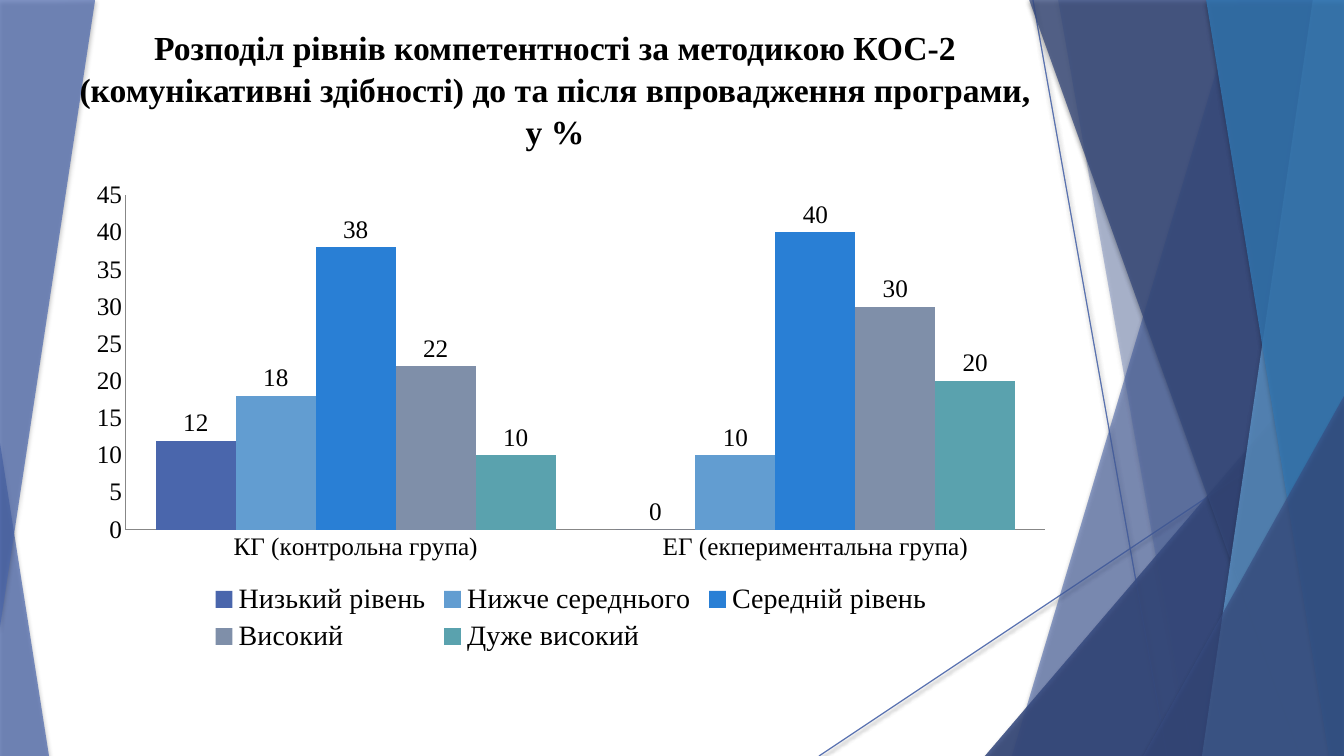
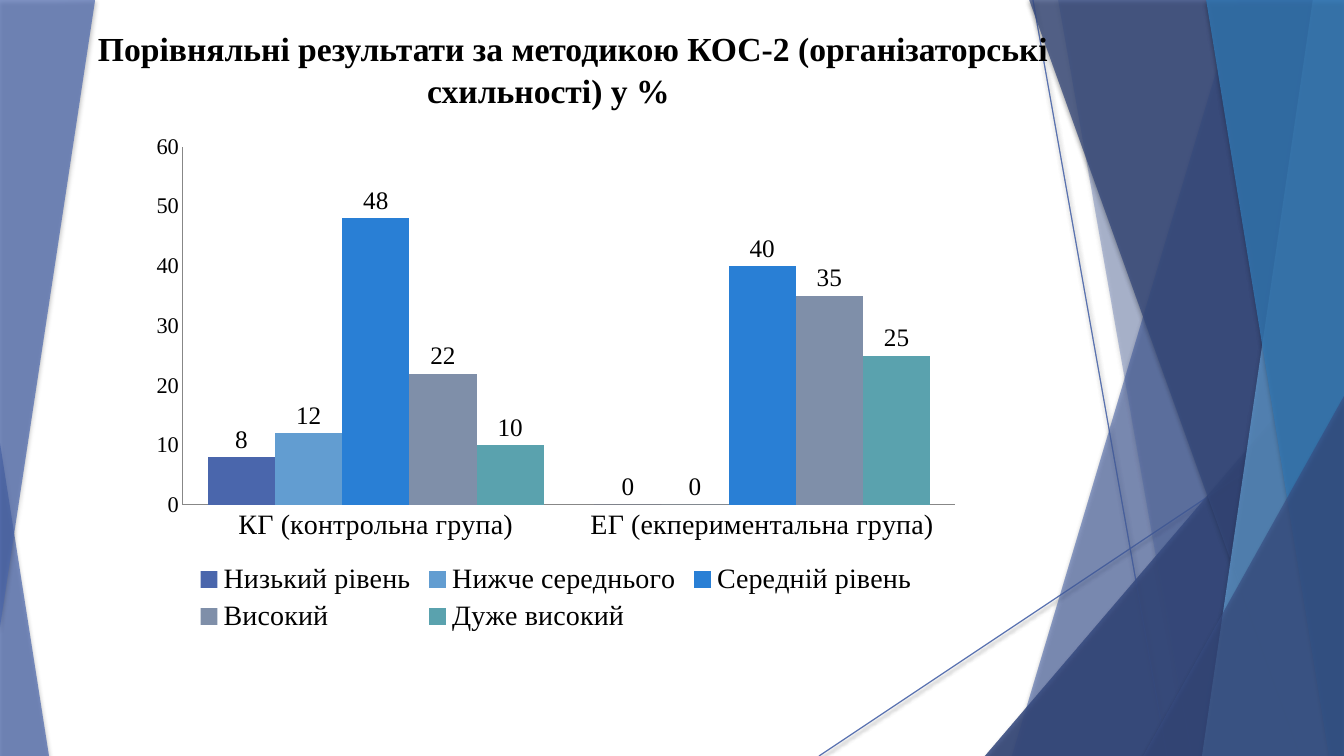
from lxml.etree import SubElement
from pptx import Presentation
from pptx.chart.data import CategoryChartData
from pptx.dml.color import RGBColor
from pptx.enum.chart import (XL_CHART_TYPE, XL_LABEL_POSITION,
                             XL_LEGEND_POSITION, XL_TICK_MARK)
from pptx.enum.shapes import MSO_CONNECTOR, MSO_SHAPE
from pptx.enum.text import MSO_ANCHOR, MSO_AUTO_SIZE, PP_ALIGN
from pptx.oxml.ns import qn
from pptx.util import Pt

SLIDE_WIDTH, SLIDE_HEIGHT = 1344, 756
EMU_PER_PX = 12192000 / SLIDE_WIDTH
FONT = "Times New Roman"
BLACK, AXIS_GRAY = "000000", "878787"
BLUE, NAVY, SKY, STEEL = "4A66AC", "384C81", "629DD1", "3477B2"

# Shadow: opacity in percent, blur and distance in points
SHAPE_SHADOW = (35, 3, 2)
LINE_SHADOW = (38, 3.1, 1.6)

# Ray lines: start and end points
RAYS = [((1033, 0), (1167, 756)), ((1344, 406), (819, 756))]

# Right-hand facets: outline or triangle box, colour, opacity in percent.
# A band is given by its top and bottom left corners and runs to the slide edge.
FACETS = [
    ("band", (1238, 1012), BLUE, 36),
    ("band", (1058, 1191), BLUE, 20),
    ("triangle", (985, 336, 359, 420), NAVY, 66),
    ("band", (1029, 1301), NAVY, 50),
    ("band", (1313, 1202), SKY, 70),
    ("band", (1206, 1329), STEEL, 80),
    ("triangle", (1143, 396, 201, 360), NAVY, 66),
]
LEFT_TRIANGLE = (0, 443, 49, 313)
LEFT_OUTLINE = [(0, 0), (95, -1), (95, 1), (0, 627)]

CATEGORIES = ["КГ (контрольна група)", "ЕГ (екпериментальна група)"]
LEVELS = {
    "Низький рівень": BLUE,
    "Нижче середнього": SKY,
    "Середній рівень": "297FD5",
    "Високий": "7F8FA9",
    "Дуже високий": "5AA2AE",
}

SLIDES = [
    {
        "title": ["Розподіл рівнів компетентності за методикою КОС-2 "
                  "(комунікативні здібності) до та після впровадження програми,",
                  "у %"],
        "title_box": (51, 22, 1008, 132),
        "indent": 0,
        "chart_box": (77, 172, 988, 486),
        "values": [(12, 0), (18, 10), (38, 40), (22, 30), (10, 20)],
        "maximum": 45, "step": 5, "category_size": 18, "value_size": 18,
    },
    {
        "title": ["Порівняльні результати за методикою КОС-2 "
                  "(організаторські схильності) у %"],
        "title_box": (-15, 22, 1127, 92),
        "indent": 49,
        "chart_box": (140, 124, 832, 514),
        "values": [(8, 0), (12, 0), (48, 40), (22, 35), (10, 25)],
        "maximum": 60, "step": 10, "category_size": 20, "value_size": 16,
    },
]


def px(length):
    return round(length * EMU_PER_PX)


def emu(lengths):
    return [px(length) for length in lengths]


def color(hex_value):
    return RGBColor.from_string(hex_value)


def apply(target, formats):
    for name, value in formats.items():
        setattr(target, name, value)


def format_font(font, size, bold=False):
    apply(font, {"name": FONT, "size": Pt(size), "bold": bold})
    font.color.rgb = color(BLACK)


def add_effects(shape, opacity, shadow):
    """Make the colours translucent and cast a soft shadow downwards."""
    properties = shape.element.spPr
    for node in properties.iter(qn("a:srgbClr")):
        SubElement(node, qn("a:alpha"), val=str(opacity * 1000))
    shadow_opacity, blur, distance = shadow
    effects = SubElement(properties, qn("a:effectLst"))
    outer = SubElement(effects, qn("a:outerShdw"), blurRad=str(Pt(blur)),
                       dist=str(Pt(distance)), dir="5400000", rotWithShape="0")
    tint = SubElement(outer, qn("a:srgbClr"), val=BLACK)
    SubElement(tint, qn("a:alpha"), val=str(shadow_opacity * 1000))


# Background artwork
def finish_facet(shape, hex_value, opacity):
    shape.fill.solid()
    shape.fill.fore_color.rgb = color(hex_value)
    shape.line.fill.background()
    add_effects(shape, opacity, SHAPE_SHADOW)


def add_outline(group, points, hex_value, opacity):
    start, *others = [emu(point) for point in points]
    builder = group.shapes.build_freeform(*start)
    builder.add_line_segments(others, close=True)
    finish_facet(builder.convert_to_shape(), hex_value, opacity)


def add_triangle(group, box, apex, hex_value, opacity):
    shape = group.shapes.add_shape(MSO_SHAPE.ISOSCELES_TRIANGLE, *emu(box))
    shape.adjustments[0] = apex
    finish_facet(shape, hex_value, opacity)


def add_right_artwork(group):
    for start, end in RAYS:
        ray = group.shapes.add_connector(MSO_CONNECTOR.STRAIGHT,
                                         *emu(start), *emu(end))
        ray.line.color.rgb = color(BLUE)
        ray.line.width = Pt(0.75)
        add_effects(ray, 70, LINE_SHADOW)
    for kind, geometry, hex_value, opacity in FACETS:
        if kind == "triangle":
            add_triangle(group, geometry, 1, hex_value, opacity)
        else:
            top, bottom = geometry
            points = [(top, -1), (SLIDE_WIDTH, -1),
                      (SLIDE_WIDTH, SLIDE_HEIGHT), (bottom, SLIDE_HEIGHT)]
            add_outline(group, points, hex_value, opacity)


def add_template_artwork(slide, layout):
    """Draw the facets and move them behind the master and layout content."""
    master_group = slide.shapes.add_group_shape()
    add_right_artwork(master_group)
    add_triangle(master_group, LEFT_TRIANGLE, 0, BLUE, 70)

    layout_group = slide.shapes.add_group_shape()
    add_outline(layout_group, LEFT_OUTLINE, BLUE, 70)
    add_right_artwork(layout_group)

    for owner, group in ((layout.slide_master, master_group),
                         (layout, layout_group)):
        owner.shapes.element.insert(2, group.element)


# Title
def place_title(title, content):
    left, top, width, height = emu(content["title_box"])
    apply(title, {"left": left, "top": top, "width": width, "height": height})
    frame = title.text_frame
    apply(frame, {"word_wrap": True, "vertical_anchor": MSO_ANCHOR.MIDDLE,
                  "auto_size": MSO_AUTO_SIZE.SHAPE_TO_FIT_TEXT})
    frame.text = "\n".join(content["title"])
    for paragraph in frame.paragraphs:
        apply(paragraph, {"alignment": PP_ALIGN.CENTER, "line_spacing": 1.05,
                          "space_before": Pt(0)})
        paragraph.runs[0].font.language_id = None
        format_font(paragraph.runs[0].font, 24, bold=True)
        if content["indent"]:
            paragraph.runs[0].font.bold = True
            paragraph._p.get_or_add_pPr().set("indent", str(px(content["indent"])))


# Chart
def format_axis(axis, size):
    apply(axis, {"has_major_gridlines": False,
                 "major_tick_mark": XL_TICK_MARK.NONE,
                 "minor_tick_mark": XL_TICK_MARK.NONE})
    axis.format.line.color.rgb = color(AXIS_GRAY)
    axis.format.line.width = Pt(0.75)
    format_font(axis.tick_labels.font, size)


def add_level_chart(slide, content):
    data = CategoryChartData()
    data.categories = CATEGORIES
    for name, values in zip(LEVELS, content["values"]):
        data.add_series(name, values)
    chart = slide.shapes.add_chart(XL_CHART_TYPE.COLUMN_CLUSTERED,
                                   *emu(content["chart_box"]), data).chart
    apply(chart, {"has_title": False, "has_legend": True})
    apply(chart.legend, {"position": XL_LEGEND_POSITION.BOTTOM,
                         "include_in_layout": False})
    format_font(chart.legend.font, 20)

    format_axis(chart.category_axis, content["category_size"])
    format_axis(chart.value_axis, content["value_size"])
    apply(chart.value_axis, {"minimum_scale": 0,
                             "maximum_scale": content["maximum"],
                             "major_unit": content["step"]})

    plot = chart.plots[0]
    apply(plot, {"gap_width": 75, "overlap": 0, "vary_by_categories": False})
    for series, hex_value in zip(plot.series, LEVELS.values()):
        series.format.fill.solid()
        series.format.fill.fore_color.rgb = color(hex_value)
        apply(series.data_labels, {"show_value": True,
                                   "position": XL_LABEL_POSITION.OUTSIDE_END})
        format_font(series.data_labels.font, 18)


def add_chart_slide(presentation, layout, content):
    slide = presentation.slides.add_slide(layout)
    add_level_chart(slide, content)
    place_title(slide.shapes.title, content)
    # The title lies in front of the chart
    slide.shapes.element.append(slide.shapes.title.element)
    return slide


def main():
    presentation = Presentation()
    apply(presentation, {"slide_width": px(SLIDE_WIDTH),
                         "slide_height": px(SLIDE_HEIGHT)})
    layout = presentation.slide_layouts[5]
    slides = [add_chart_slide(presentation, layout, content)
              for content in SLIDES]
    add_template_artwork(slides[0], layout)
    presentation.save("out.pptx")


if __name__ == "__main__":
    main()
